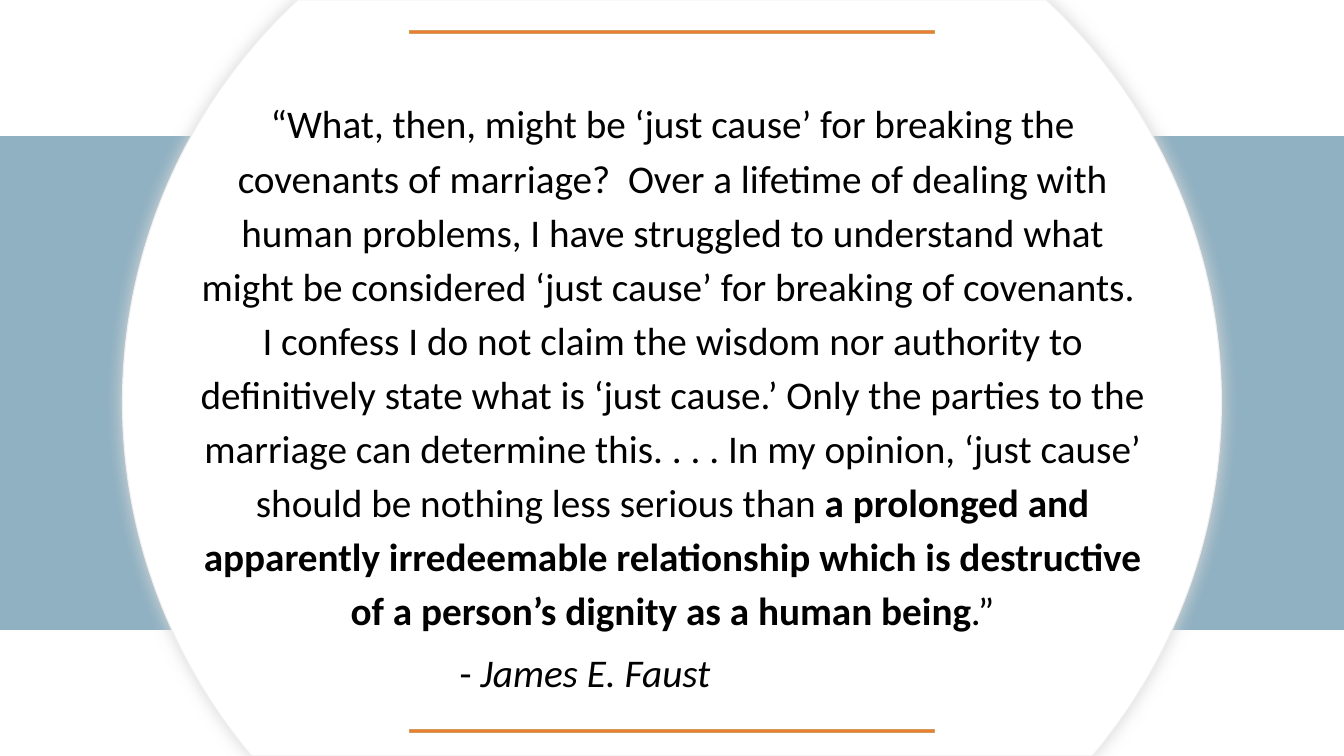
from math import asin, cos, pi, sin, tan

from lxml.etree import SubElement
from pptx import Presentation
from pptx.dml.color import RGBColor
from pptx.enum.shapes import MSO_SHAPE
from pptx.enum.text import MSO_AUTO_SIZE, PP_ALIGN
from pptx.oxml.ns import qn
from pptx.util import Inches, Pt

BLUE = RGBColor(0x90, 0xB1, 0xC2)
ORANGE = RGBColor(0xED, 0x7D, 0x31)
BRONZE = RGBColor(0xD0, 0x9D, 0x5C)
WHITE = RGBColor(0xFF, 0xFF, 0xFF)
PALE_GREY = RGBColor(0xEF, 0xEF, 0xEF)
SHADOW_GREY = RGBColor(0xD8, 0xD8, 0xD8)
BLACK = RGBColor(0, 0, 0)

WIDTH, HEIGHT = 13.33, 7.5
CENTER_X, CENTER_Y, RADIUS = WIDTH / 2, 3.99, 5.45
RULE_WIDTH, RULE_HEIGHT = 5.2, 0.03

QUOTE = [
    ("“What, then, might be ‘just cause’ for breaking the covenants of marriage?  "
     "Over a lifetime of dealing with human problems, I have struggled to understand "
     "what might be considered ‘just cause’ for breaking of covenants.  I confess I do "
     "not claim the wisdom nor authority to definitively state what is ‘just cause.’ "
     "Only the parties to the marriage can determine this. . . . In my opinion, ‘just "
     "cause’ should be nothing less serious than ", False),
    ("a prolonged and apparently irredeemable relationship which is destructive of a "
     "person’s dignity as a human being", True),
    (".”", False),
]


def paint(shape, fill, line):
    shape.shadow.inherit = False
    shape.fill.solid()
    shape.fill.fore_color.rgb = fill
    shape.line.color.rgb = line
    shape.line.width = Pt(0.75)


def add_text_area(page, left, top, width, height):
    """Add a wrapping text box and return its frame and first paragraph."""
    box = page.shapes.add_textbox(Inches(left), Inches(top), Inches(width), Inches(height))
    frame = box.text_frame
    frame.word_wrap = True
    frame.auto_size = MSO_AUTO_SIZE.SHAPE_TO_FIT_TEXT
    para = frame.paragraphs[0]
    para.font.name = "Calibri"
    para.font.size = Pt(28)
    para.font.color.rgb = BLACK
    return frame, para


deck = Presentation()
deck.slide_width, deck.slide_height = Inches(WIDTH), Inches(HEIGHT)
page = deck.slides.add_slide(deck.slide_layouts[6])

band = page.shapes.add_shape(
    MSO_SHAPE.RECTANGLE, 0, Inches(1.35), deck.slide_width, Inches(4.9))
paint(band, BLUE, BLUE)

# Circle cut off at the top and bottom edges: two Bezier arcs on each side
top_angle = asin(-CENTER_Y / RADIUS)
bottom_angle = asin((HEIGHT - CENTER_Y) / RADIUS)
right_side = [(cos(top_angle), sin(top_angle))]
for start, end in ((top_angle, 0), (0, bottom_angle)):
    reach = 4 / 3 * tan((end - start) / 4)
    right_side += [
        (cos(start) - reach * sin(start), sin(start) + reach * cos(start)),
        (cos(end) + reach * sin(end), sin(end) - reach * cos(end)),
        (cos(end), sin(end)),
    ]
left_side = [(-x, y) for x, y in reversed(right_side)]
outline = [(Inches(CENTER_X + RADIUS * x), Inches(CENTER_Y + RADIUS * y))
           for x, y in right_side + left_side]
builder = page.shapes.build_freeform(*outline[0])
builder.add_line_segments(outline[1:], close=True)
circle = builder.convert_to_shape()
paint(circle, WHITE, PALE_GREY)

# Each run of three points becomes one curve; the bottom edge stays straight
segments = list(circle._element.iter(qn("a:lnTo")))
for first in (0, 3, 7, 10):
    curve = segments[first]
    curve.tag = qn("a:cubicBezTo")
    for segment in segments[first + 1:first + 3]:
        curve.append(segment[0])
        segment.getparent().remove(segment)

effects = circle._element.spPr.find(qn("a:effectLst"))
shadow = SubElement(effects, qn("a:outerShdw"), blurRad=str(Pt(11)), dist="0",
                    algn="ctr", rotWithShape="0")
SubElement(shadow, qn("a:srgbClr"), val=str(SHADOW_GREY))

for top in (0.3, 7.24):
    rule = page.shapes.add_shape(
        MSO_SHAPE.RECTANGLE, Inches((WIDTH - RULE_WIDTH) / 2), Inches(top),
        Inches(RULE_WIDTH), Inches(RULE_HEIGHT))
    paint(rule, ORANGE, BRONZE)

frame, quote = add_text_area(page, 1.82, 0.82, 9.7, 5.62)
frame.margin_left = frame.margin_right = Inches(0.1)
frame.margin_top = frame.margin_bottom = Inches(0.1)
quote.alignment = PP_ALIGN.CENTER
quote.line_spacing = 1.15
for text, bold in QUOTE:
    span = quote.add_run()
    span.text = text
    span.font.bold = bold

frame, author = add_text_area(page, 4.46, 5.92, 4.42, 1.04)
author.add_line_break()
for text, italic in (("- ", False), ("James E. Faust", True)):
    span = author.add_run()
    span.text = text
    span.font.italic = italic

deck.save("out.pptx")
